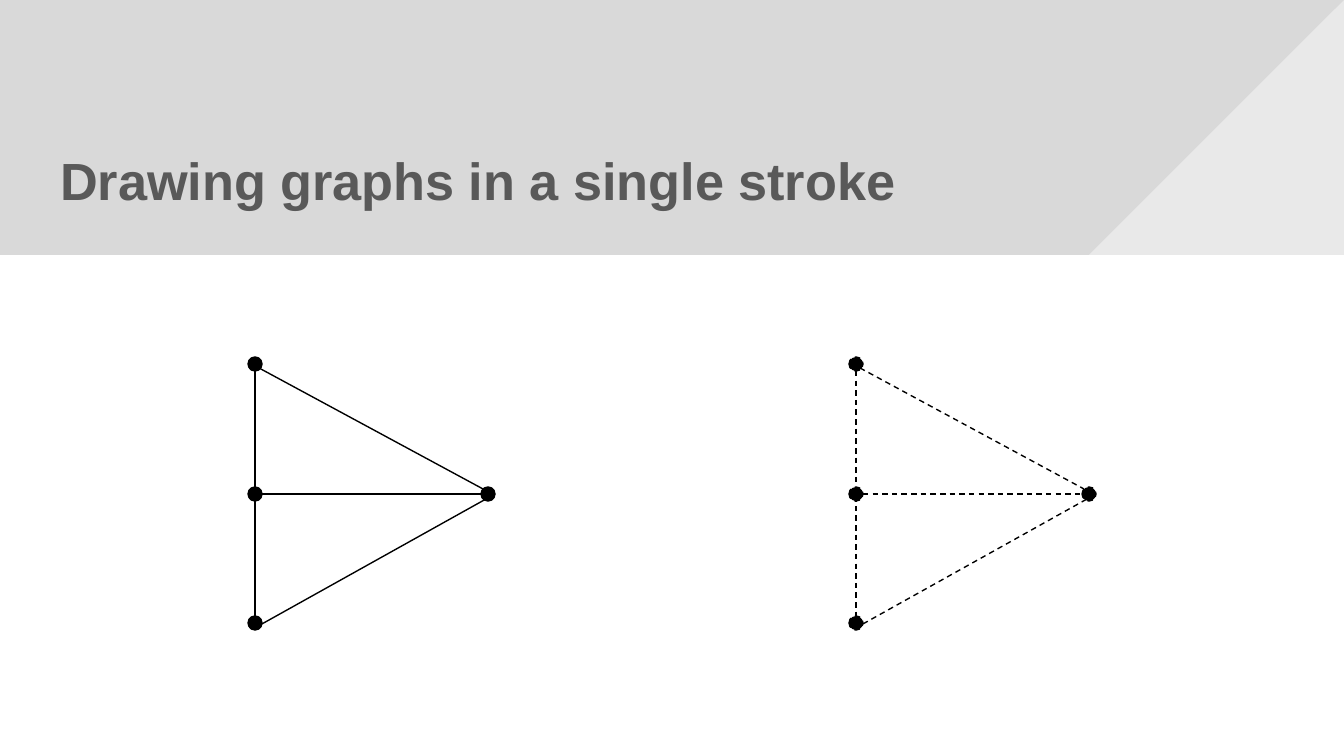
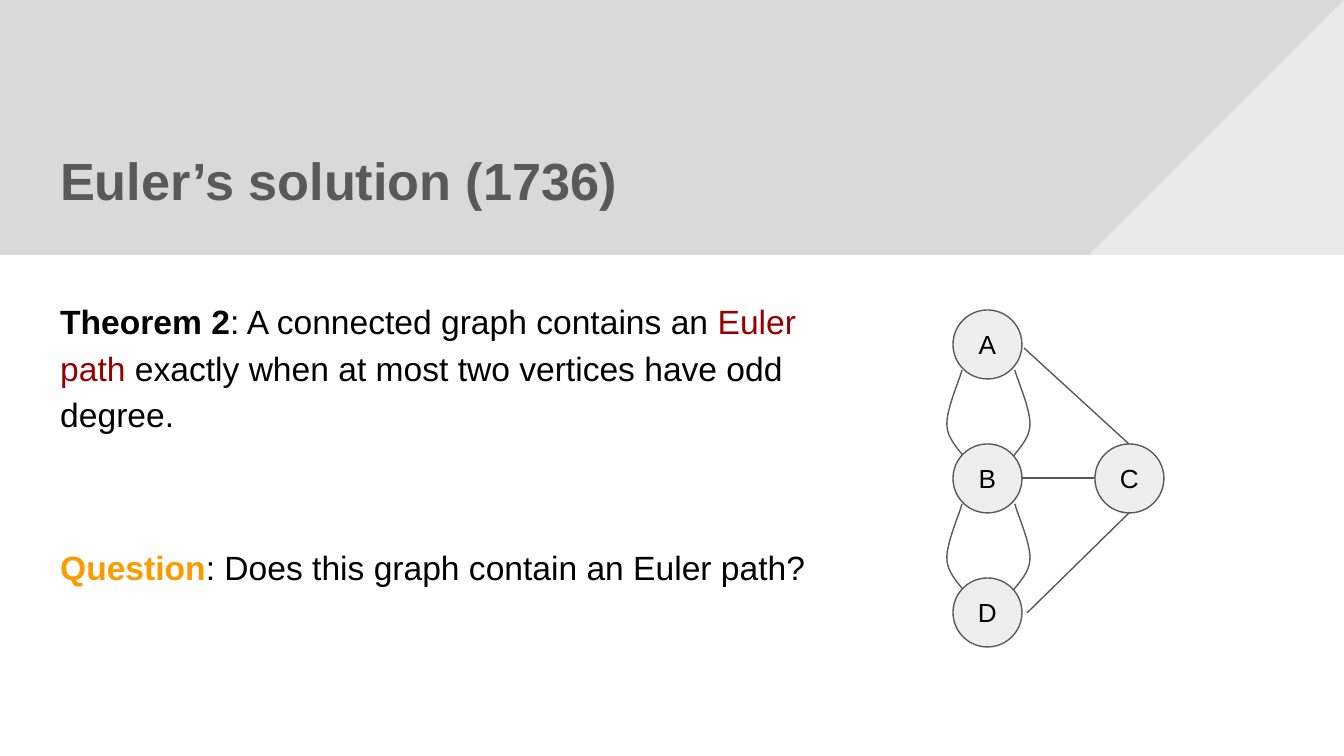
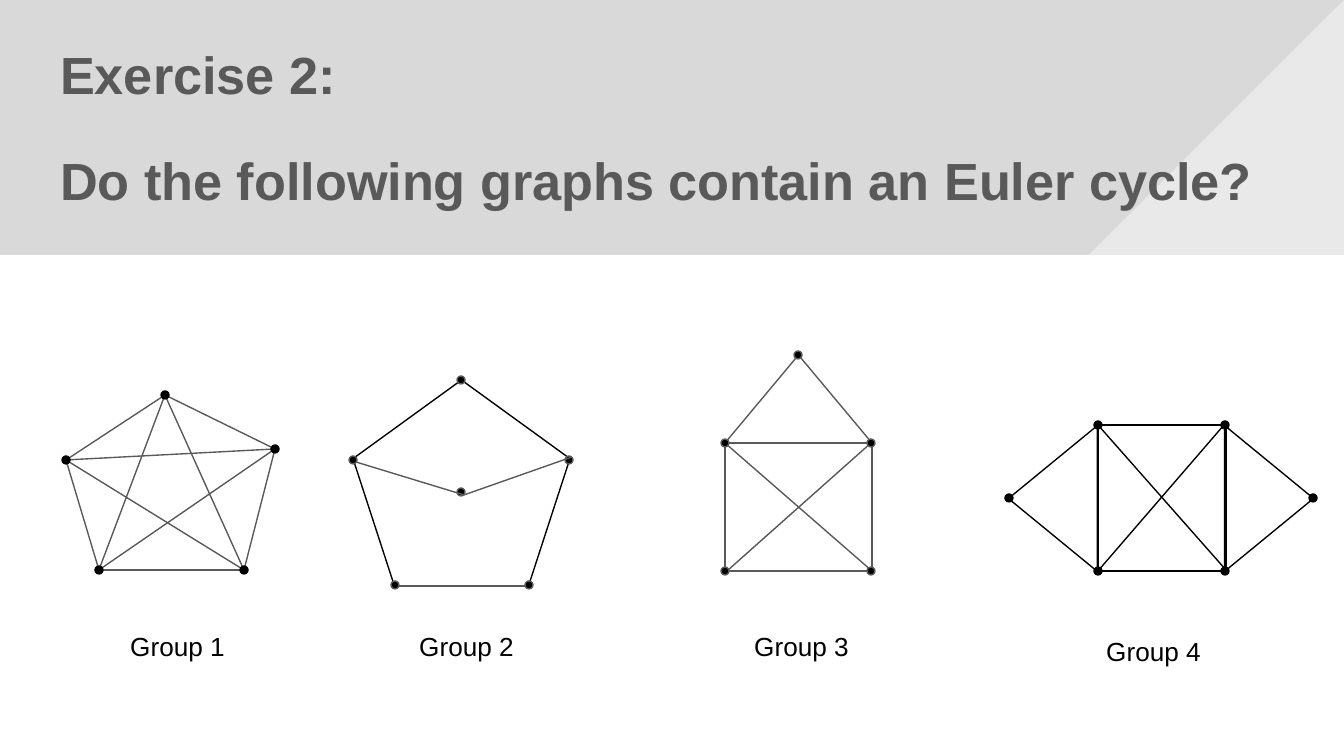
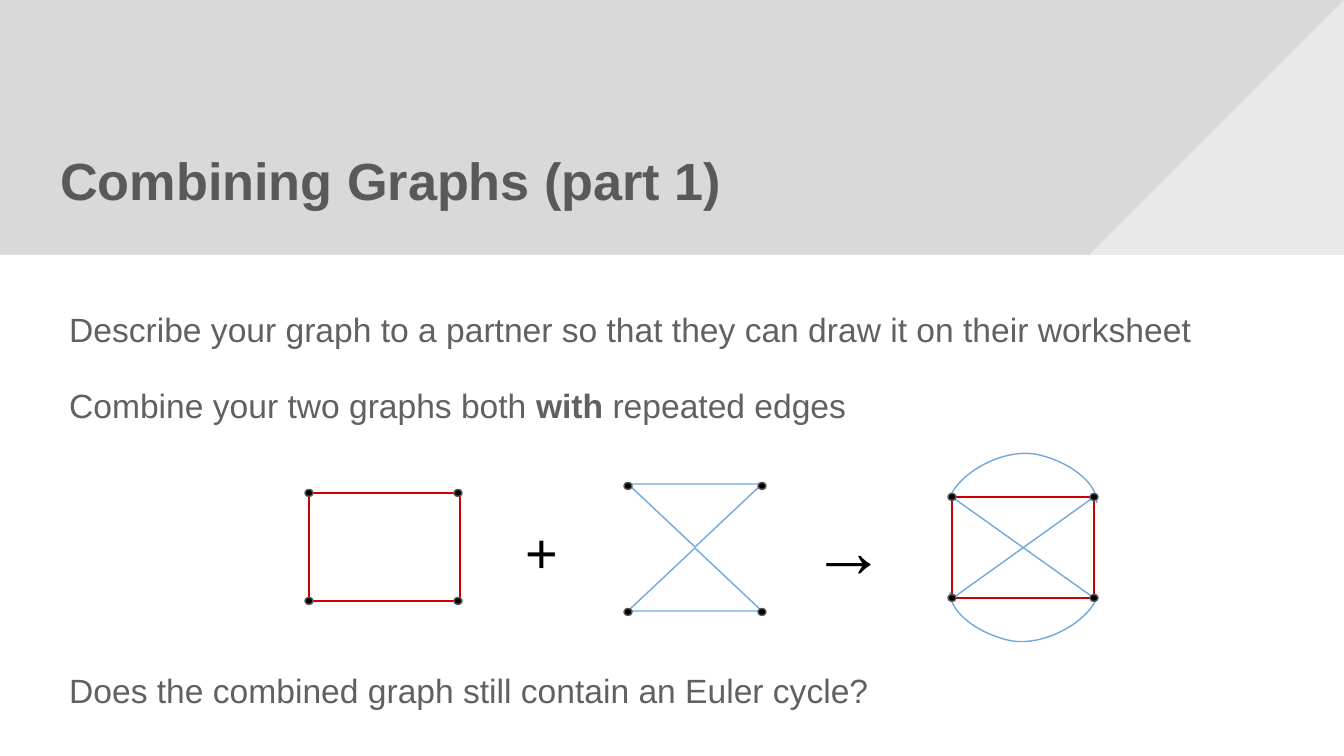
from dataclasses import dataclass
from itertools import pairwise, product

from lxml import etree
from pptx import Presentation
from pptx import util as u
from pptx.dml import color
from pptx.enum import dml, shapes, text
from pptx.oxml import ns
from pptx.slide import Slide

SCALE = 914400 / 134.4
KIND = shapes.MSO_SHAPE


@dataclass(frozen=True)
class Theme:
    font: str = "Arial"
    black: str = "000000"
    white: str = "FFFFFF"
    band: str = "D9D9D9"
    title: str = "595959"
    edge: str = "595959"
    body: str = "616161"
    node: str = "EEEEEE"
    term: str = "980000"
    question: str = "FF9900"
    red: str = "CC0000"
    blue: str = "6FA8DC"
    title_size: int = 28
    body_size: int = 18
    label_size: int = 14
    plus_size: int = 30
    arrow_size: int = 40
    line_width: float = 0.75
    body_spacing: float = 1.15


THEME = Theme()


@dataclass(frozen=True)
class Box:
    slide: Slide
    left: int = 0
    top: int = 0

    def at(self, x, y):
        return px(self.left + x), px(self.top + y)


def px(length):
    return round(length * SCALE)


def rgb(value):
    return color.RGBColor.from_string(value)


def style_line(line, tint, dashed=False):
    line.color.rgb = rgb(tint)
    line.width = u.Pt(THEME.line_width)
    if dashed:
        line.dash_style = dml.MSO_LINE.DASH


def finish(shape, fill=None, line=None, dashed=False):
    shape.shadow.inherit = False
    if fill:
        shape.fill.solid()
        shape.fill.fore_color.rgb = rgb(fill)
    else:
        shape.fill.background()
    if line:
        style_line(shape.line, line, dashed)
    else:
        shape.line.fill.background()
    return shape


def add_figure(box, kind, x, y, width, height, rotation=0, **look):
    figure = box.slide.shapes.add_shape(kind, *box.at(x, y), px(width), px(height))
    figure.rotation = rotation
    return finish(figure, **look)


def add_edge(box, start, end, tint=THEME.black, dashed=False):
    edge = box.slide.shapes.add_connector(
        shapes.MSO_CONNECTOR.STRAIGHT, *box.at(*start), *box.at(*end))
    style_line(edge.line, tint, dashed)
    etree.SubElement(edge._element.spPr, ns.qn("a:effectLst"))


def add_dots(box, centers, line=THEME.black, width=8, height=8, dashed=False):
    for x, y in centers:
        add_figure(box, KIND.OVAL, x - width / 2, y - height / 2, width, height,
                   fill=THEME.black, line=line, dashed=dashed)


def add_outline(box, points, tint, close=False):
    start, *others = [box.at(*point) for point in points]
    builder = box.slide.shapes.build_freeform(*start)
    builder.add_line_segments(others, close=close)
    finish(builder.convert_to_shape(), line=tint)


def add_curve(box, controls, tint, steps=16):
    points = [controls[0]]
    for first in range(0, len(controls) - 1, 3):
        segment = controls[first:first + 4]
        for step in range(1, steps + 1):
            t = step / steps
            weights = ((1 - t) ** 3, 3 * t * (1 - t) ** 2, 3 * t * t * (1 - t), t ** 3)
            points.append(tuple(sum(w * value for w, value in zip(weights, axis))
                                for axis in zip(*segment)))
    add_outline(box, points, tint)


def add_text_frame(box, x, y, width, height, anchor=text.MSO_ANCHOR.TOP):
    frame = box.slide.shapes.add_textbox(*box.at(x, y), px(width), px(height)).text_frame
    return set_frame(frame, anchor)


def set_frame(frame, anchor):
    frame.word_wrap = True
    frame.vertical_anchor = anchor
    frame.margin_left = frame.margin_right = u.Inches(0.1)
    frame.margin_top = frame.margin_bottom = u.Inches(0.1)
    return frame


def write(frame, *parts, size=THEME.label_size, tint=THEME.black, bold=False,
          align=text.PP_ALIGN.LEFT, spacing=None, before=0, after=0):
    paragraph = frame.add_paragraph() if frame.text else frame.paragraphs[0]
    paragraph.alignment = align
    paragraph.line_spacing = spacing
    paragraph.space_before = u.Pt(before)
    paragraph.space_after = u.Pt(after)
    for part in parts:
        words, special = (part, {}) if isinstance(part, str) else part
        run = paragraph.add_run()
        run.text = words
        run.font.name = THEME.font
        run.font.size = u.Pt(size)
        run.font.bold = special.get("bold", bold)
        run.font.color.rgb = rgb(special.get("tint", tint))


def write_body(frame, *parts, **layout):
    write(frame, *parts, size=THEME.body_size, spacing=THEME.body_spacing, **layout)


def title_band(box, *lines, width=1257):
    add_figure(box, KIND.RECTANGLE, 0, 0, 1344, 255, fill=THEME.band)
    corner = add_figure(box, KIND.RIGHT_TRIANGLE, 1089, 0, 255, 255,
                        rotation=270, fill=THEME.white)
    tint = corner._element.spPr.find(".//" + ns.qn("a:srgbClr"))
    etree.SubElement(tint, ns.qn("a:alpha"), val="44000")
    frame = add_text_frame(box, 47, 22, width, 202, text.MSO_ANCHOR.BOTTOM)
    for index, line in enumerate(lines):
        write(frame, line, size=THEME.title_size, tint=THEME.title, bold=True,
              before=23 if index else 0)


def stroke_graph(box, dashed=False):
    edges = [((7, 14), (7, 260)), ((11, 11), (235, 132)),
             ((14, 267), (247, 137)), ((14, 137), (247, 137))]
    for start, end in edges:
        add_edge(box, start, end, dashed=dashed)
    add_dots(box, [(7, 7), (7, 137), (7, 266), (240, 137)],
             width=14, height=14, dashed=dashed)


def bridge_graph(box):
    size, step = 69, 134
    left_bridge = [(16, 60), (14, 69), (0, 100), (1, 115), (1, 129), (15, 142), (18, 147)]
    right_bridge = [(85 - x, y) for x, y in left_bridge]
    for drop, bridge in product((0, step), (left_bridge, right_bridge)):
        add_curve(box, [(x, y + drop) for x, y in bridge], THEME.edge)
    land = {"A": (7, 0), "B": (7, step), "D": (7, 2 * step), "C": (149, step)}
    for name, (x, y) in land.items():
        node = add_figure(box, KIND.FLOWCHART_CONNECTOR, x, y, size, size,
                          fill=THEME.node, line=THEME.edge)
        frame = set_frame(node.text_frame, text.MSO_ANCHOR.MIDDLE)
        write(frame, name, align=text.PP_ALIGN.CENTER)
    for start, end in [((78, 38), (183, 134)), ((81, 303), (183, 203)),
                       ((76, 168), (149, 168))]:
        add_edge(box, start, end, THEME.edge)


def star_graph(box):
    west, north, east, southeast, southwest = ring = [
        (4, 69), (103, 4), (213, 58), (182, 179), (37, 179)]
    add_outline(box, [southwest, north, southeast, west, east], THEME.edge, close=True)
    for start, end in pairwise(ring + [west]):
        add_edge(box, start, end, THEME.edge)
    add_dots(box, ring)


def pentagon_graph(box):
    add_figure(box, KIND.REGULAR_PENTAGON, 4, 4, 217, 206, line=THEME.black)
    add_dots(box, [(4, 84), (112, 4), (220, 84), (180, 209), (46, 209), (112, 116)],
             THEME.edge)
    for start, end in pairwise([(7, 86), (115, 119), (223, 81)]):
        add_edge(box, start, end, THEME.edge)


def house_graph(box):
    add_figure(box, KIND.RECTANGLE, 4, 92, 147, 128, line=THEME.edge)
    add_figure(box, KIND.ISOSCELES_TRIANGLE, 4, 4, 147, 88, line=THEME.edge)
    add_edge(box, (4, 92), (151, 220), THEME.edge)
    add_edge(box, (6, 220), (150, 92), THEME.edge)
    add_dots(box, [(77, 4), *product((4, 150), (92, 220))], THEME.edge)


def double_house_graph(box):
    add_figure(box, KIND.RECTANGLE, 93, 5, 128, 146, line=THEME.black)
    for x, rotation in ((-25, 270), (191, 90)):
        add_figure(box, KIND.ISOSCELES_TRIANGLE, x, 34, 146, 89,
                   rotation=rotation, line=THEME.black)
    add_edge(box, (93, 151), (219, 5))
    add_edge(box, (221, 150), (93, 5))
    add_dots(box, [(4, 78), (308, 78), *product((93, 220), (5, 151))])


def corner_dots(box, columns, rows):
    add_dots(box, product(columns, rows), THEME.edge, height=7)


def red_graph(box):
    add_figure(box, KIND.RECTANGLE, 4, 4, 151, 108, line=THEME.red)
    corner_dots(box, (4, 153), (4, 112))


def blue_graph(box):
    for y, rotation in ((66, 0), (2, 180)):
        add_figure(box, KIND.ISOSCELES_TRIANGLE, 5, y, 134, 63,
                   rotation=rotation, line=THEME.blue)
    corner_dots(box, (5, 139), (4, 130))


def combined_graph(box):
    upper = [(3, 44), (13, 20), (54, -4), (88, 1), (119, 7), (150, 28), (150, 50)]
    lower = [(153 - x, 189 - y) for x, y in upper]
    for arc in (upper, lower):
        add_curve(box, arc, THEME.blue)
    add_figure(box, KIND.RECTANGLE, 5, 44, 142, 101, line=THEME.red)
    add_edge(box, (5, 44), (147, 145), THEME.blue)
    add_edge(box, (6, 145), (147, 44), THEME.blue)
    corner_dots(box, (5, 147), (44, 145))


def stroke_slide(slide):
    title_band(Box(slide), "Drawing graphs in a single stroke")
    stroke_graph(Box(slide, 849, 357), dashed=True)
    stroke_graph(Box(slide, 248, 357))


def euler_slide(slide):
    page = Box(slide)
    title_band(page, "Euler’s solution (1736)", width=771)
    theorem = add_text_frame(page, 47, 282, 816, 398)
    write_body(theorem, ("Theorem 2", {"bold": True}), ": A connected graph contains an ",
               ("Euler path", {"tint": THEME.term}),
               " exactly when at most two vertices have odd degree.")
    write_body(theorem, ("Question", {"bold": True, "tint": THEME.question}),
               ": Does this graph contain an Euler path?", before=57, after=16)
    bridge_graph(Box(slide, 946, 310))


def exercise_slide(slide):
    page = Box(slide)
    title_band(page, "Exercise 2:", "Do the following graphs contain an Euler cycle?",
               width=1253)
    groups = [(star_graph, 62, 391, 117, 617), (pentagon_graph, 349, 376, 406, 617),
              (house_graph, 721, 351, 741, 617), (double_house_graph, 1005, 420, 1093, 622)]
    for number, (draw, left, top, label_x, label_y) in enumerate(groups, 1):
        draw(Box(slide, left, top))
        write(add_text_frame(page, label_x, label_y, 124, 52), f"Group {number}")


def combining_slide(slide):
    page = Box(slide)
    title_band(page, "Combining Graphs (part 1)", width=771)
    task = add_text_frame(page, 56, 289, 1257, 144)
    write_body(task, "Describe your graph to a partner so that they can draw it on their worksheet",
               tint=THEME.body)
    write_body(task, "Combine your two graphs both ", ("with", {"bold": True}),
               " repeated edges", tint=THEME.body, before=16, after=16)
    question = add_text_frame(page, 56, 650, 911, 81)
    write_body(question, "Does the combined graph still contain an Euler cycle?",
               tint=THEME.body, after=16)
    red_graph(Box(slide, 305, 489))
    write(add_text_frame(page, 512, 504, 67, 86), "+", size=THEME.plus_size)
    blue_graph(Box(slide, 623, 482))
    write(add_text_frame(page, 798, 489, 102, 101), "→", size=THEME.arrow_size, bold=True)
    combined_graph(Box(slide, 947, 453))


def main():
    deck = Presentation()
    deck.slide_width, deck.slide_height = px(1344), px(756)
    for build in (stroke_slide, euler_slide, exercise_slide, combining_slide):
        build(deck.slides.add_slide(deck.slide_layouts[6]))
    deck.save("out.pptx")


if __name__ == "__main__":
    main()
